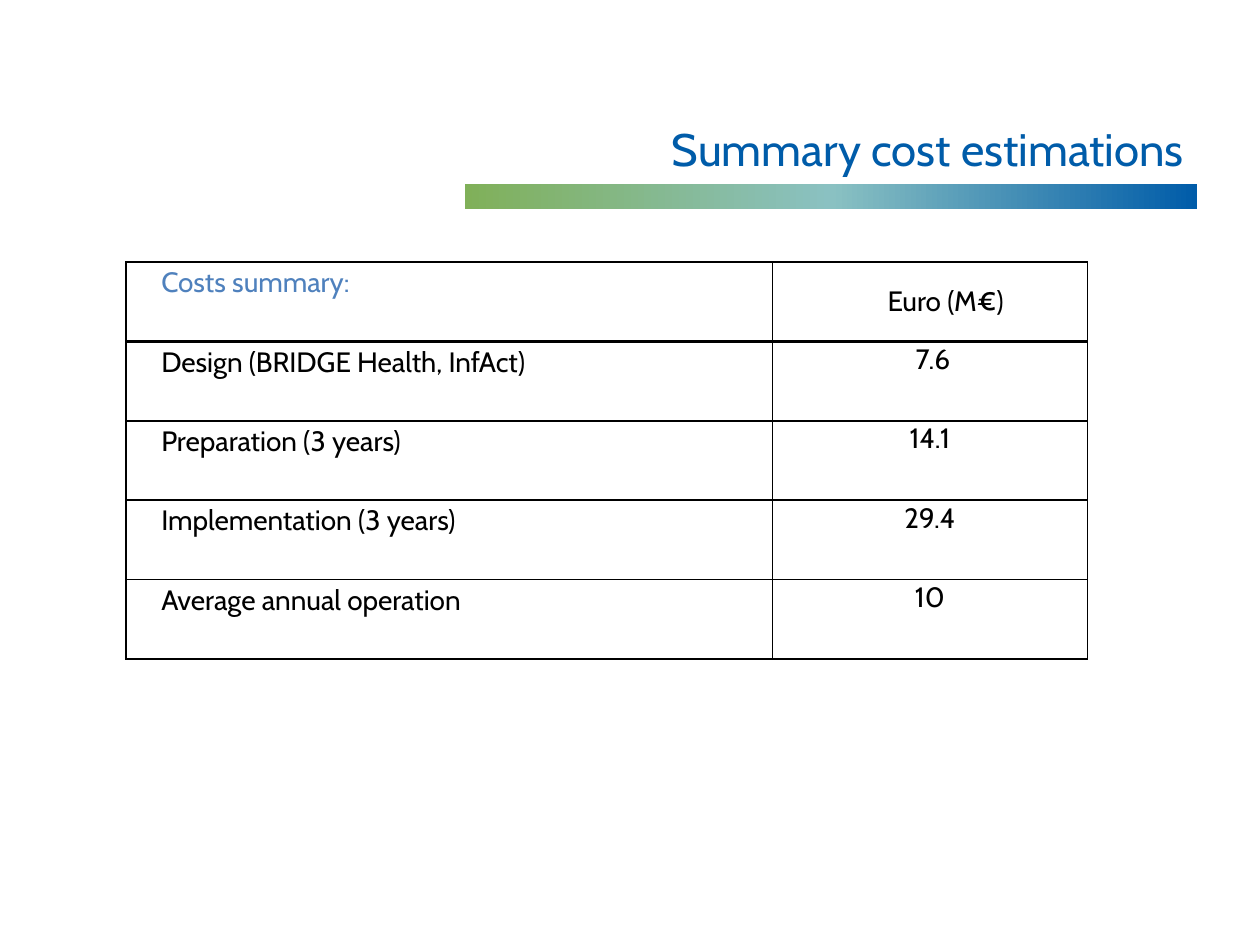
from dataclasses import dataclass

from lxml import etree
from pptx import Presentation
from pptx.dml.color import RGBColor
from pptx.enum import shapes, text
from pptx.oxml import ns
from pptx.util import Inches, Pt

BLUE = RGBColor(0x00, 0x5C, 0xA9)
TEAL = RGBColor(0x8A, 0xC1, 0xC2)
GREEN = RGBColor(0x80, 0xB0, 0x59)
HEADING_BLUE = RGBColor(0x4F, 0x81, 0xBD)
BLACK = RGBColor(0, 0, 0)
WHITE = RGBColor(0xFF, 0xFF, 0xFF)
FONT = "Cabin"
ROW_HEIGHT = 0.63
COLUMN_WIDTHS = (5.13, 2.5)


@dataclass
class CellStyle:
    margin: float
    indent: float = 0
    color: RGBColor = BLACK
    alignment: text.PP_ALIGN = text.PP_ALIGN.LEFT
    anchor: text.MSO_ANCHOR = text.MSO_ANCHOR.TOP
    bottom_line: float = 1


@dataclass
class CostRow:
    label: str
    value: str
    label_style: CellStyle
    value_style: CellStyle


LABEL = CellStyle(0.03, 0.25)
VALUE = CellStyle(0.01, alignment=text.PP_ALIGN.CENTER)
HEADING = CellStyle(0.03, 0.25, HEADING_BLUE, bottom_line=2)
UNIT = CellStyle(0.03, 0.25, alignment=text.PP_ALIGN.CENTER,
                 anchor=text.MSO_ANCHOR.MIDDLE, bottom_line=2)
ROWS = (
    CostRow("Costs summary:", "Euro (M€)", HEADING, UNIT),
    CostRow("Design (BRIDGE Health, InfAct)", " 7.6", LABEL, VALUE),
    CostRow("Preparation (3 years)", "14.1", LABEL, VALUE),
    CostRow("Implementation (3 years)", "29.4", LABEL, VALUE),
    CostRow("Average annual operation", "10", LABEL, VALUE),
)


def set_attributes(target, values: dict) -> None:
    for name, value in values.items():
        setattr(target, name, value)


def write(paragraph, content: str, size: float, color: RGBColor) -> None:
    run = paragraph.add_run()
    run.text = content
    set_attributes(run.font, {"name": FONT, "size": Pt(size)})
    run.font.color.rgb = color


def add_color(parent, color: RGBColor) -> None:
    etree.SubElement(parent, ns.qn("a:srgbClr"), val=str(color))


def add_gradient_bar(slide) -> None:
    bar = slide.shapes.add_shape(shapes.MSO_SHAPE.RECTANGLE, Inches(3.69), Inches(1.46),
                                 Inches(5.81), Inches(0.2))
    bar.shadow.inherit = False
    bar.line.fill.background()
    bar.fill.gradient()
    bar.fill.gradient_angle = 0
    stops = bar.fill._fill._gradFill.find(ns.qn("a:gsLst"))
    for stop in list(stops):
        stops.remove(stop)
    for position, color in ((0, GREEN), (50, TEAL), (100, BLUE)):
        stop = etree.SubElement(stops, ns.qn("a:gs"), pos=str(position * 1000))
        add_color(stop, color)


def add_title(slide) -> None:
    box = slide.shapes.add_textbox(Inches(0.5), Inches(0.3), Inches(9), Inches(1.14))
    set_attributes(box.text_frame, {"word_wrap": True,
                                    "vertical_anchor": text.MSO_ANCHOR.BOTTOM})
    paragraph = box.text_frame.paragraphs[0]
    paragraph.alignment = text.PP_ALIGN.RIGHT
    write(paragraph, "Summary cost estimations", 26, BLUE)


def add_borders(cell, top: float, bottom: float) -> None:
    properties = cell._tc.get_or_add_tcPr()
    widths = {"a:lnL": 1, "a:lnR": 1, "a:lnT": top, "a:lnB": bottom}
    for index, (tag, width) in enumerate(widths.items()):
        line = etree.Element(ns.qn(tag), w=str(Pt(width)))
        add_color(etree.SubElement(line, ns.qn("a:solidFill")), BLACK)
        properties.insert(index, line)


def fill_cell(cell, content: str, style: CellStyle, top_line: float) -> None:
    sides = ("left", "right", "top", "bottom")
    set_attributes(cell, {f"margin_{side}": Inches(style.margin) for side in sides})
    cell.vertical_anchor = style.anchor
    cell.fill.background()
    paragraph = cell.text_frame.paragraphs[0]
    paragraph.alignment = style.alignment
    if style.indent:
        set_attributes_xml = {"marL": str(Inches(style.indent)), "indent": "0"}
        for name, value in set_attributes_xml.items():
            paragraph._p.get_or_add_pPr().set(name, value)
    write(paragraph, content, 16, style.color)
    add_borders(cell, top_line, style.bottom_line)


def add_cost_table(slide) -> None:
    frame = slide.shapes.add_table(len(ROWS), len(COLUMN_WIDTHS), Inches(1), Inches(2.08),
                                   Inches(sum(COLUMN_WIDTHS)),
                                   Inches(ROW_HEIGHT * len(ROWS)))
    table = frame.table
    set_attributes(table, {"first_row": False, "horz_banding": False})
    for column, width in zip(table.columns, COLUMN_WIDTHS):
        column.width = Inches(width)
    top_line = 1
    for index, row in enumerate(ROWS):
        table.rows[index].height = Inches(ROW_HEIGHT)
        fill_cell(table.cell(index, 0), row.label, row.label_style, top_line)
        fill_cell(table.cell(index, 1), row.value, row.value_style, top_line)
        top_line = row.label_style.bottom_line


def main() -> None:
    presentation = Presentation()
    set_attributes(presentation, {"slide_width": Inches(10), "slide_height": Inches(7.5)})
    slide = presentation.slides.add_slide(presentation.slide_layouts[6])
    slide.background.fill.solid()
    slide.background.fill.fore_color.rgb = WHITE

    # Heading with its gradient underline
    add_gradient_bar(slide)
    add_title(slide)

    # Cost table
    add_cost_table(slide)
    presentation.save("out.pptx")


if __name__ == "__main__":
    main()
